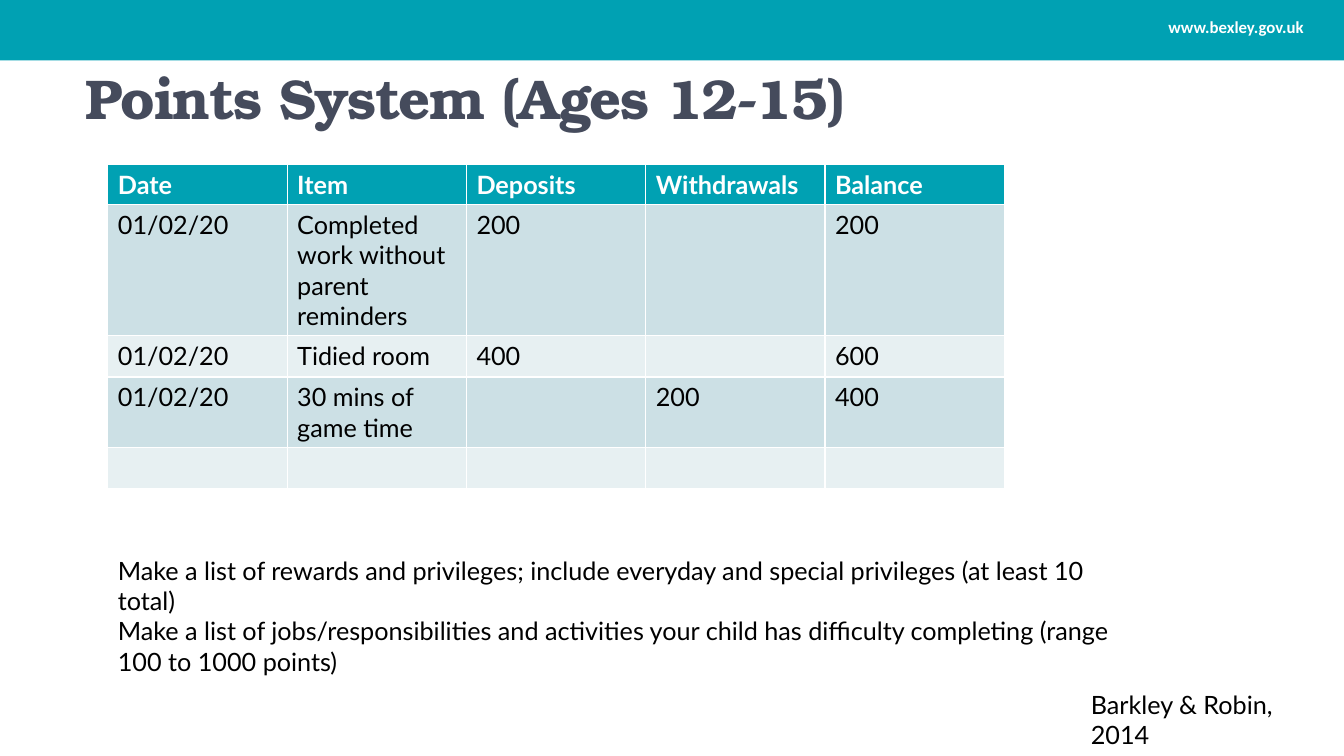
from dataclasses import dataclass

import pptx
import pptx.dml.color
import pptx.enum.shapes
import pptx.enum.text
import pptx.util

Inches = pptx.util.Inches


@dataclass(frozen=True)
class Theme:
    teal: str = "00A1B3"
    slate: str = "454B5C"
    white: str = "FFFFFF"
    black: str = "000000"
    bands: tuple = ("CCE0E5", "E7F0F2")
    title_font: str = "TeX Gyre Bonum"
    body_font: str = "Lato"
    address_font: str = "Calibri"
    title_size: int = 40
    body_size: int = 18
    address_size: int = 12


THEME = Theme()

LEDGER = [
    ("Date", "Item", "Deposits", "Withdrawals", "Balance"),
    ("01/02/20", "Completed work without parent reminders", "200", "", "200"),
    ("01/02/20", "Tidied room", "400", "", "600"),
    ("01/02/20", "30 mins of game time", "", "200", "400"),
    ("", "", "", "", ""),
]
ROW_HEIGHTS = (0.39, 1.3, 0.41, 0.7, 0.41)
NOTES = [
    "Make a list of rewards and privileges; include everyday and special "
    "privileges (at least 10 total)",
    "Make a list of jobs/responsibilities and activities your child has "
    "difficulty completing (range 100 to 1000 points)",
]


def rgb(value):
    return pptx.dml.color.RGBColor.from_string(value)


def style(para, name, size, colour, bold=False):
    para.font.name = name
    para.font.size = pptx.util.Pt(size)
    para.font.bold = bold
    para.font.color.rgb = rgb(colour)


def add_text(page, box, lines, name=THEME.body_font, size=THEME.body_size,
             colour=THEME.black, bold=False):
    frame = page.shapes.add_textbox(*map(Inches, box)).text_frame
    frame.word_wrap = True
    frame.text = "\n".join(lines)
    for para in frame.paragraphs:
        style(para, name, size, colour, bold)
    return frame


def add_banner(page, box):
    left, top, width, height = box
    band = page.shapes.add_shape(
        pptx.enum.shapes.MSO_SHAPE.RECTANGLE, *map(Inches, box))
    band.shadow.inherit = False
    band.fill.solid()
    band.fill.fore_color.rgb = rgb(THEME.teal)
    band.line.fill.background()
    address = add_text(
        page, (left + width - 1.91, top + 0.12, 1.68, 0.3),
        ["www.bexley.gov.uk"], THEME.address_font, THEME.address_size,
        THEME.white, True)
    address.paragraphs[0].alignment = pptx.enum.text.PP_ALIGN.CENTER


def add_title(page, box):
    frame = add_text(page, box, ["Points System (Ages 12-15)"],
                     THEME.title_font, THEME.title_size, THEME.slate, True)
    for span in frame.paragraphs[0].runs:
        span.font._element.set("spc", "-100")


def add_ledger(page, box):
    table = page.shapes.add_table(
        len(LEDGER), len(LEDGER[0]), *map(Inches, box)).table
    for column in table.columns:
        column.width = Inches(box[2] / len(LEDGER[0]))
    for row_index, (row, height) in enumerate(zip(table.rows, ROW_HEIGHTS)):
        row.height = Inches(height)
        header = row_index == 0
        fill = THEME.teal if header else THEME.bands[(row_index - 1) % 2]
        for cell, text in zip(row.cells, LEDGER[row_index]):
            cell.text = text
            cell.fill.solid()
            cell.fill.fore_color.rgb = rgb(fill)
            style(cell.text_frame.paragraphs[0], THEME.body_font,
                  THEME.body_size, THEME.white if header else THEME.black,
                  header)


def main():
    deck = pptx.Presentation()
    deck.slide_width = Inches(13.33)
    deck.slide_height = Inches(7.5)
    page = deck.slides.add_slide(deck.slide_layouts[6])
    add_banner(page, (0, 0, 13.33, 0.6))
    add_title(page, (0.75, 0.58, 11.5, 1.45))
    add_ledger(page, (1.07, 1.63, 8.89, sum(ROW_HEIGHTS)))
    add_text(page, (1.07, 5.46, 10.25, 1.32), NOTES)
    add_text(page, (10.72, 6.79, 2.25, 0.71), ["Barkley & Robin, 2014"])
    deck.save("out.pptx")


if __name__ == "__main__":
    main()
